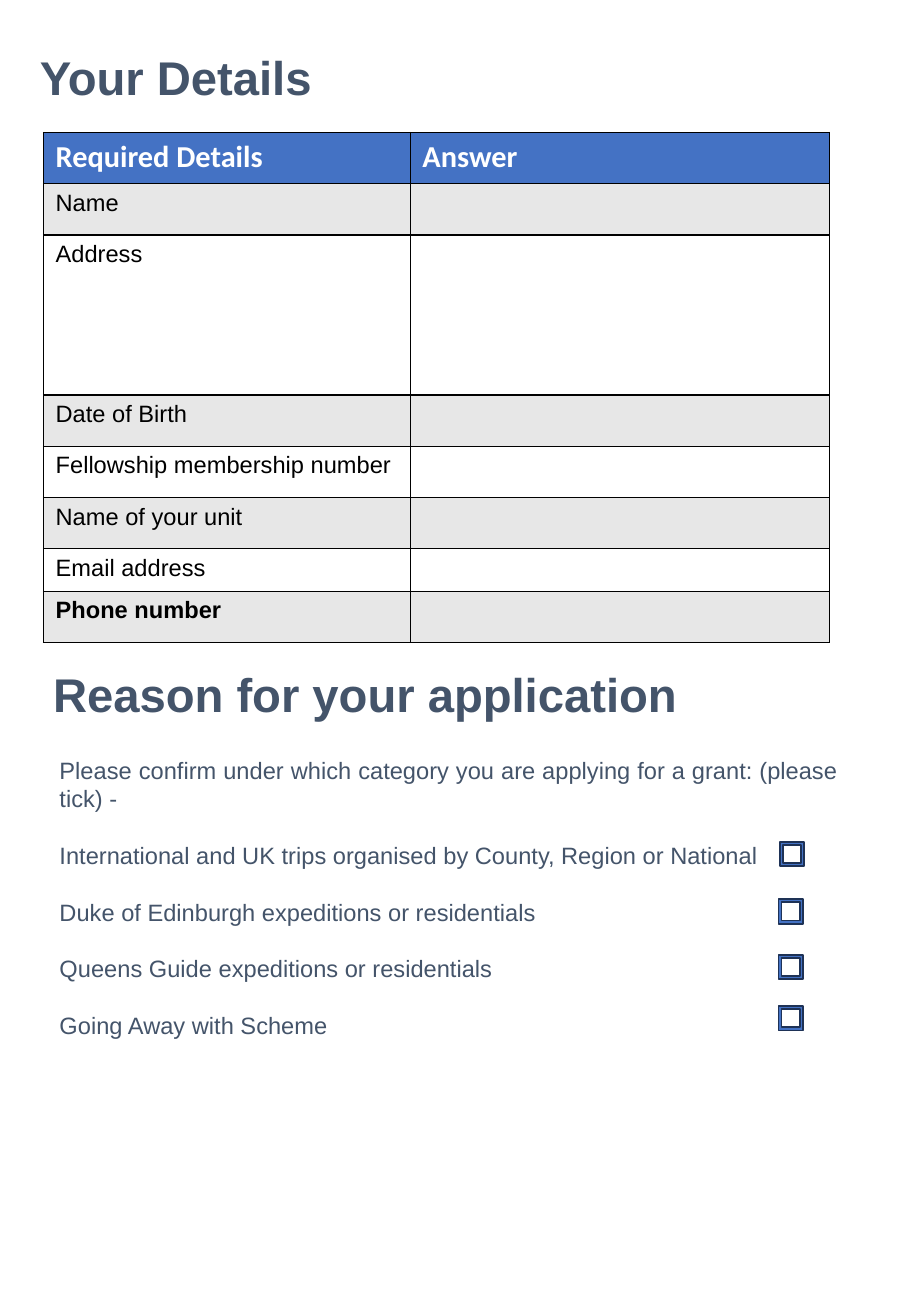
from dataclasses import dataclass

from lxml.etree import SubElement
from pptx import Presentation
from pptx.dml.color import RGBColor
from pptx.enum.shapes import MSO_SHAPE
from pptx.enum.text import MSO_ANCHOR, MSO_AUTO_SIZE, PP_ALIGN
from pptx.oxml.ns import qn
from pptx.util import Cm, Pt

COLORS = {
    "slate": "44546A",
    "blue": "4472C4",
    "navy": "1E3256",
    "band": "E7E7E7",
    "white": "FFFFFF",
    "black": "000000",
}
LINE_HEIGHT = Pt(16.8)
COLUMN_WIDTHS = (7.67, 8.76)
CHECKBOX_SIZE = 0.51


@dataclass
class Box:
    left: float
    top: float
    width: float
    height: float

    def lengths(self) -> tuple:
        return Cm(self.left), Cm(self.top), Cm(self.width), Cm(self.height)


@dataclass
class DetailRow:
    label: str
    answer: str = ""
    height: float = 1.07
    bold: bool = False


@dataclass
class Checkbox:
    left: float
    top: float


TITLE_BOX = Box(0.58, 0.86, 16.43, 1.63)
TABLE_BOX = Box(0.91, 2.77, 16.43, 10.64)
REASON_BOX = Box(0.86, 13.59, 16.43, 1.96)
CATEGORY_BOX = Box(0.99, 15.67, 16.79, 6.25)

DETAIL_ROWS = [
    DetailRow("Required Details", "Answer", bold=True),
    DetailRow("Name"),
    DetailRow("Address", height=3.35),
    DetailRow("Date of Birth"),
    DetailRow("Fellowship membership number"),
    DetailRow("Name of your unit"),
    DetailRow("Email address", height=0.89),
    DetailRow("Phone number", bold=True),
]
CATEGORY_LINES = [
    "Please confirm under which category you are applying for a grant: (please tick) -",
    "International and UK trips organised by County, Region or National",
    "Duke of Edinburgh expeditions or residentials",
    "Queens Guide expeditions or residentials",
    "Going Away with Scheme",
]
CHECKBOXES = [
    Checkbox(16.31, 17.6),
    Checkbox(16.28, 18.8),
    Checkbox(16.28, 19.96),
    Checkbox(16.28, 21.03),
]


def color(name: str) -> RGBColor:
    return RGBColor.from_string(COLORS[name])


def set_font(paragraph, size: int, color_name: str, bold: bool = False, name: str = "Arial") -> None:
    font = paragraph.font
    font.name, font.size, font.bold = name, Pt(size), bold
    font.color.rgb = color(color_name)


def place(shape, box: Box) -> None:
    shape.left, shape.top, shape.width, shape.height = box.lengths()


def write_heading(shape, text: str) -> None:
    frame = shape.text_frame
    frame.text = text
    frame.word_wrap = True
    frame.auto_size = MSO_AUTO_SIZE.NONE
    frame.vertical_anchor = MSO_ANCHOR.MIDDLE
    paragraph = frame.paragraphs[0]
    paragraph.alignment = PP_ALIGN.LEFT
    paragraph.line_spacing = 0.9
    set_font(paragraph, 28, "slate", bold=True)


def add_cell_borders(cell) -> None:
    properties = cell._tc.get_or_add_tcPr()
    for side in ("a:lnL", "a:lnR", "a:lnT", "a:lnB"):
        line = SubElement(properties, qn(side), w=str(Pt(1)))
        fill = SubElement(line, qn("a:solidFill"))
        SubElement(fill, qn("a:srgbClr"), val=COLORS["black"])


def add_details_table(slide) -> None:
    table = slide.shapes.add_table(len(DETAIL_ROWS), len(COLUMN_WIDTHS), *TABLE_BOX.lengths()).table
    table.horz_banding = False
    for column, width in zip(table.columns, COLUMN_WIDTHS):
        column.width = Cm(width)
    for index, detail in enumerate(DETAIL_ROWS):
        table.rows[index].height = Cm(detail.height)
        fill_name = "blue" if index == 0 else ("band" if index % 2 else "white")
        for cell, text in zip(table.rows[index].cells, (detail.label, detail.answer)):
            add_cell_borders(cell)
            cell.fill.solid()
            cell.fill.fore_color.rgb = color(fill_name)
            cell.text = text
            paragraph = cell.text_frame.paragraphs[0]
            if index == 0:
                set_font(paragraph, 18, "white", bold=True, name="Calibri")
            else:
                set_font(paragraph, 14, "black", bold=detail.bold)
            if not text:
                # An empty cell takes its line height from the paragraph end
                SubElement(paragraph._p, qn("a:endParaRPr"), sz="1400")


def write_categories(shape) -> None:
    frame = shape.text_frame
    frame.text = "\n".join(CATEGORY_LINES)
    frame.auto_size = MSO_AUTO_SIZE.NONE
    for index, paragraph in enumerate(frame.paragraphs):
        paragraph.alignment = PP_ALIGN.JUSTIFY
        paragraph.line_spacing = LINE_HEIGHT
        paragraph.space_before = LINE_HEIGHT if index else Pt(0)
        properties = paragraph._p.get_or_add_pPr()
        properties.set("marL", "0")
        properties.set("indent", "0")
        SubElement(properties, qn("a:buNone"))
        set_font(paragraph, 14, "slate")


def add_checkbox(slide, checkbox: Checkbox) -> None:
    box = Box(checkbox.left, checkbox.top, CHECKBOX_SIZE, CHECKBOX_SIZE)
    shape = slide.shapes.add_shape(MSO_SHAPE.FRAME, *box.lengths())
    shape.shadow.inherit = False
    shape.fill.solid()
    shape.fill.fore_color.rgb = color("blue")
    shape.line.color.rgb = color("navy")
    shape.line.width = Pt(1)


def main() -> None:
    presentation = Presentation()
    presentation.slide_width, presentation.slide_height = Cm(19.05), Cm(27.51)
    slide = presentation.slides.add_slide(presentation.slide_layouts[1])

    # Personal details
    title = slide.shapes.title
    place(title, TITLE_BOX)
    write_heading(title, "Your Details")
    add_details_table(slide)

    # Reason for the application
    reason = slide.shapes.add_textbox(*REASON_BOX.lengths())
    write_heading(reason, "Reason for your application")
    categories = slide.placeholders[1]
    place(categories, CATEGORY_BOX)
    write_categories(categories)
    for checkbox in CHECKBOXES:
        add_checkbox(slide, checkbox)

    presentation.save("out.pptx")


if __name__ == "__main__":
    main()
